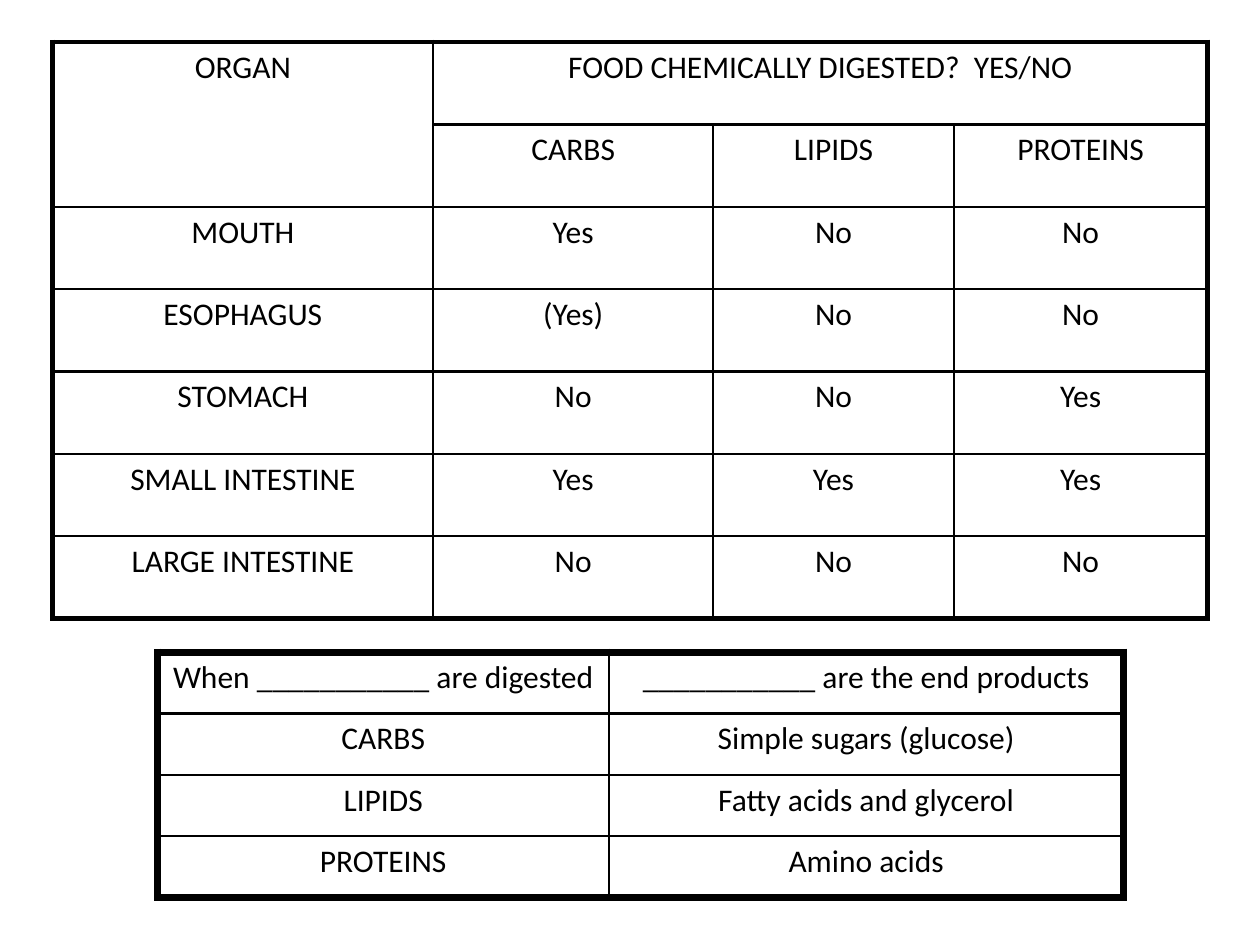
from lxml import etree
from pptx import Presentation
from pptx.dml.color import RGBColor
from pptx.enum import text
from pptx.oxml import ns
from pptx.util import Inches, Pt

HUES = {"ink": "000000"}
FONT = "Calibri"
WIDE, HIGH = Inches(10), Inches(7.5)
THIN = 1.5


def write(cell, words, size=18, hue="ink", align=text.PP_ALIGN.CENTER):
    para = cell.text_frame.paragraphs[0]
    para.alignment = align
    run = para.add_run()
    run.text = words
    run.font.size = Pt(size)
    run.font.name = FONT
    run.font.color.rgb = RGBColor.from_string(HUES[hue])


def edge(cell, side, width, hue="ink"):
    props = cell._tc.get_or_add_tcPr()
    line = etree.SubElement(props, ns.qn("a:ln" + side), w=str(Pt(width)))
    fill = etree.SubElement(line, ns.qn("a:solidFill"))
    etree.SubElement(fill, ns.qn("a:srgbClr"), val=HUES[hue])


def frame(cell, row, col, rows, cols, thick):
    """Thick lines on the table's outer sides, thin lines inside."""
    last_row = row + (cell.span_height if cell.is_merge_origin else 1)
    last_col = col + (cell.span_width if cell.is_merge_origin else 1)
    outer = {"L": col == 0, "R": last_col == cols,
             "T": row == 0, "B": last_row == rows}
    for side, out in outer.items():
        edge(cell, side, thick if out else THIN)


def grid(slide, box, parts, data, thick, spans=()):
    """Box is left, top, width, height; parts are the column shares."""
    rows, cols = len(data), len(parts)
    left, top, width, height = box
    table = slide.shapes.add_table(
        rows, cols, int(left), int(top), int(width), int(height)).table
    table.first_row = table.horz_banding = False
    for col, part in zip(table.columns, parts):
        col.width = int(width * part / sum(parts))
    for row in table.rows:
        row.height = int(height / rows)
    for first, last in spans:
        table.cell(*first).merge(table.cell(*last))
    for r, line in enumerate(data):
        for c, words in enumerate(line):
            cell = table.cell(r, c)
            if cell.is_spanned:
                continue
            frame(cell, r, c, rows, cols, thick)
            cell.fill.background()
            write(cell, words)


def organs(slide, box):
    data = [
        ("ORGAN", "FOOD CHEMICALLY DIGESTED?  YES/NO", "", ""),
        ("", "CARBS", "LIPIDS", "PROTEINS"),
        ("MOUTH", "Yes", "No", "No"),
        ("ESOPHAGUS", "(Yes)", "No", "No"),
        ("STOMACH", "No", "No", "Yes"),
        ("SMALL INTESTINE", "Yes", "Yes", "Yes"),
        ("LARGE INTESTINE", "No", "No", "No"),
    ]
    spans = [((0, 0), (1, 0)), ((0, 1), (0, 3))]
    grid(slide, box, (3.02, 2.22, 1.91, 2.01), data, 3, spans)


def ends(slide, box):
    blank = "_" * 11
    data = [
        (f"When {blank} are digested", f"{blank} are the end products"),
        ("CARBS", "Simple sugars (glucose)"),
        ("LIPIDS", "Fatty acids and glycerol"),
        ("PROTEINS", "Amino acids"),
    ]
    grid(slide, box, (3.58, 4.08), data, 4.5)


def main():
    deck = Presentation()
    deck.slide_width, deck.slide_height = WIDE, HIGH
    slide = deck.slides.add_slide(deck.slide_layouts[6])
    # Digestion by organ
    organs(slide, (WIDE / 24, HIGH * 2 / 45, WIDE * 11 / 12, HIGH * 0.61))
    # End products of digestion
    ends(slide, (WIDE / 8, HIGH * 0.69, WIDE * 23 / 30, HIGH * 0.26))
    deck.save("out.pptx")


if __name__ == "__main__":
    main()
